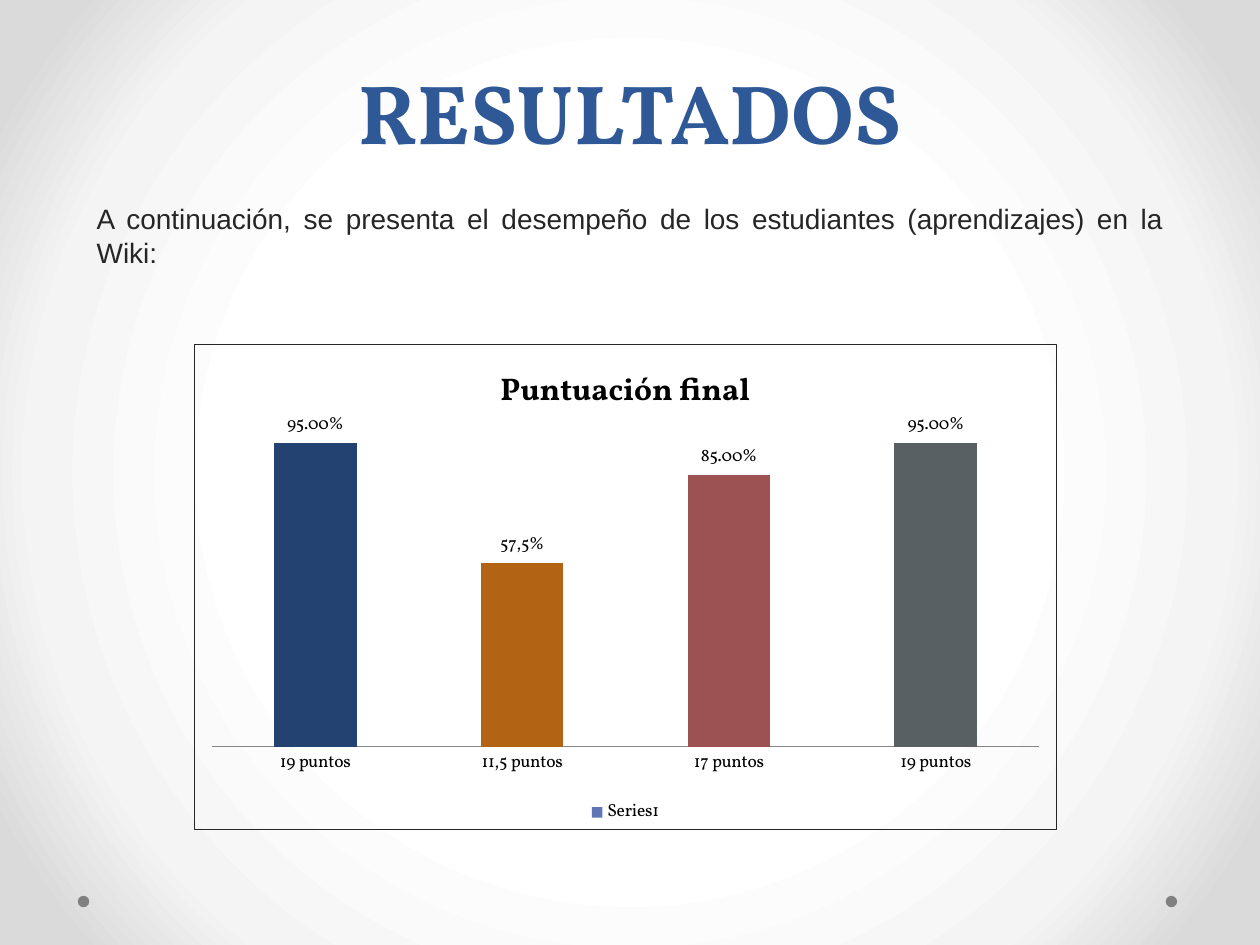
from lxml import etree
from pptx import Presentation, util as u
from pptx.chart.data import CategoryChartData
from pptx.dml.color import RGBColor
from pptx.enum import chart as charts, shapes, text
from pptx.oxml import parse_xml
from pptx.oxml.ns import nsdecls, qn

COLORS = {
    "title": "2F5897", "ink": "262626", "black": "000000", "dot": "808080",
    "axis": "868686", "series": "6076B4",
}
BACKGROUND_STOPS = [(50, "FFFFFF"), (76, "F4F4F4"), (92, "DADADA")]
RESULTS = [
    ("19 puntos", 0.95, "234271"),
    ("11,5 puntos", 0.575, "B26314"),
    ("17 puntos", 0.85, "9C5252"),
    ("19 puntos", 0.95, "586064"),
]
PLOT_LAYOUT = {"x": 0.02, "y": 0.17, "w": 0.96, "h": 0.66}


def set_font(font, name, size, color, bold=False):
    """Apply a typeface, size, colour and weight to a font."""
    font.name, font.size, font.bold = name, u.Pt(size), bold
    font.color.rgb = RGBColor.from_string(color)


def paint_background(page):
    """Give the page a radial gradient that darkens towards the corners."""
    page.background.fill.solid()
    properties = page.element.xpath(".//p:bgPr")[0]
    stops = "".join(
        f'<a:gs pos="{position * 1000}"><a:srgbClr val="{color}"/></a:gs>'
        for position, color in BACKGROUND_STOPS)
    gradient = parse_xml(
        f'<a:gradFill {nsdecls("a")} rotWithShape="1"><a:gsLst>{stops}</a:gsLst>'
        '<a:path path="circle"><a:fillToRect l="50000" t="50000" r="50000" b="50000"/>'
        '</a:path></a:gradFill>')
    properties.replace(properties[0], gradient)


def add_dot(page, left):
    """Draw one of the small dots at the foot of the page."""
    size = u.Cm(0.23)
    dot = page.shapes.add_shape(
        shapes.MSO_SHAPE.OVAL, u.Cm(left), u.Cm(18.06), size, size)
    dot.shadow.inherit = False
    dot.fill.solid()
    dot.fill.fore_color.rgb = RGBColor.from_string(COLORS["dot"])
    dot.line.fill.background()


def add_text(page, words, area, *, font, size, color, align, bold=False,
             anchor=text.MSO_ANCHOR.TOP, spacing=None):
    """Add a wrapped text box holding one formatted paragraph."""
    box = page.shapes.add_textbox(*map(u.Cm, area))
    frame = box.text_frame
    frame.word_wrap = True
    frame.vertical_anchor = anchor
    para = frame.paragraphs[0]
    para.alignment = align
    if spacing:
        para.line_spacing = u.Pt(spacing)
    span = para.add_run()
    span.text = words
    set_font(span.font, font, size, color, bold)


def frame_chart(chart):
    """Outline the chart area and fix the place of its plot."""
    space = chart.element
    outline = parse_xml(
        f'<c:spPr {nsdecls("c", "a")}><a:noFill/><a:ln w="9525"><a:solidFill>'
        f'<a:srgbClr val="{COLORS["ink"]}"/></a:solidFill></a:ln></c:spPr>')
    space.find(qn("c:chart")).addnext(outline)
    plot_area = space.xpath(".//c:plotArea")[0]
    for old in plot_area.findall(qn("c:layout")):
        plot_area.remove(old)
    layout = etree.Element(qn("c:layout"))
    manual = etree.SubElement(layout, qn("c:manualLayout"))
    settings = {"layoutTarget": "inner", "xMode": "edge", "yMode": "edge", **PLOT_LAYOUT}
    for tag, value in settings.items():
        etree.SubElement(manual, qn(f"c:{tag}")).set("val", str(value))
    plot_area.insert(0, layout)


def format_axes(chart):
    """Show a plain category axis and hide the value axis."""
    category = chart.category_axis
    category.major_tick_mark = charts.XL_TICK_MARK.NONE
    category.format.line.color.rgb = RGBColor.from_string(COLORS["axis"])
    category.format.line.width = u.Pt(0.75)
    value = chart.value_axis
    value.minimum_scale, value.maximum_scale = 0, 1
    value.has_major_gridlines = False
    value.tick_labels.number_format = "0.00%"
    value.tick_labels.number_format_is_linked = False
    value.visible = False


def format_columns(plot):
    """Colour every column and label it with its score."""
    plot.gap_width, plot.overlap, plot.vary_by_categories = 150, -25, False
    series = plot.series[0]
    series.format.fill.solid()
    series.format.fill.fore_color.rgb = RGBColor.from_string(COLORS["series"])
    for index, (_, _, color) in enumerate(RESULTS):
        fill = series.points[index].format.fill
        fill.solid()
        fill.fore_color.rgb = RGBColor.from_string(color)
    labels = series.data_labels
    labels.show_value = True
    labels.number_format, labels.number_format_is_linked = "0.00%", False
    labels.position = charts.XL_LABEL_POSITION.OUTSIDE_END
    set_font(labels.font, "Vollkorn", 10, COLORS["black"])
    label = series.points[1].data_label
    span = label.text_frame.paragraphs[0].add_run()
    span.text = "57,5%"
    set_font(span.font, "Vollkorn", 10, COLORS["black"])
    label.position = charts.XL_LABEL_POSITION.OUTSIDE_END


def add_score_chart(page, area):
    """Add the column chart of final scores."""
    data = CategoryChartData(number_format="0.00%")
    data.categories = [name for name, _, _ in RESULTS]
    data.add_series("Series1", [score for _, score, _ in RESULTS])
    chart = page.shapes.add_chart(
        charts.XL_CHART_TYPE.COLUMN_CLUSTERED, *map(u.Cm, area), data).chart
    set_font(chart.font, "Vollkorn", 10, COLORS["black"])
    chart.has_title = True
    span = chart.chart_title.text_frame.paragraphs[0].add_run()
    span.text = "Puntuación final"
    set_font(span.font, "Vollkorn", 18, COLORS["black"], bold=True)
    chart.has_legend = True
    chart.legend.position = charts.XL_LEGEND_POSITION.BOTTOM
    chart.legend.include_in_layout = False
    format_axes(chart)
    format_columns(chart.plots[0])
    frame_chart(chart)


def main():
    """Build the results slide and save it."""
    deck = Presentation()
    deck.slide_width, deck.slide_height = u.Cm(25.4), u.Cm(19.05)
    page = deck.slides.add_slide(deck.slide_layouts[6])
    paint_background(page)
    for left in (23.5, 1.57):
        add_dot(page, left)
    add_text(page, "RESULTADOS", (1.27, -1.07, 22.86, 4.45), font="Vollkorn",
             size=48, color=COLORS["title"], align=text.PP_ALIGN.CENTER,
             bold=True, anchor=text.MSO_ANCHOR.BOTTOM, spacing=58)
    add_score_chart(page, (3.91, 6.93, 17.4, 9.8))
    add_text(page, "A continuación, se presenta el desempeño de los estudiantes "
             "(aprendizajes) en la Wiki:", (1.7, 3.94, 22, 1.63), font="Arial",
             size=16, color=COLORS["ink"], align=text.PP_ALIGN.JUSTIFY)
    deck.save("out.pptx")


if __name__ == "__main__":
    main()
